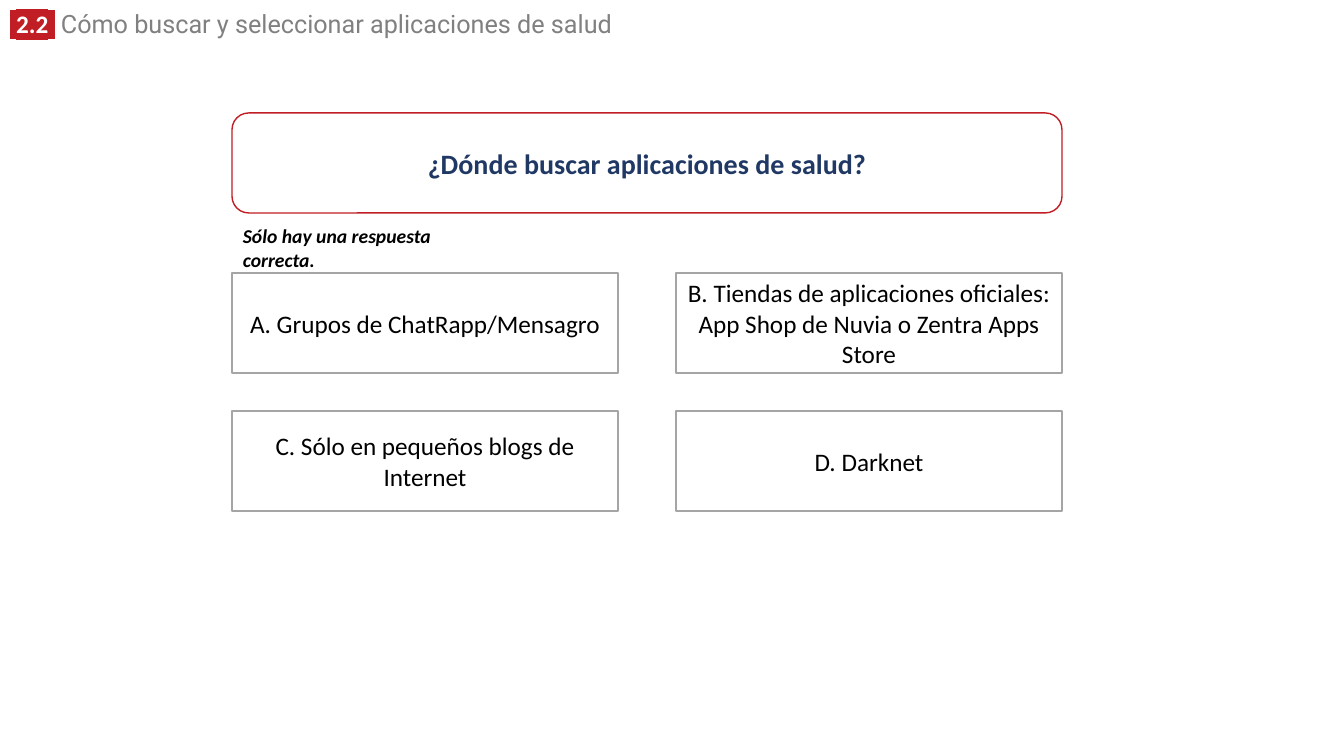
"""Builds a quiz slide on where to look for health apps."""
from dataclasses import dataclass

from lxml import etree
from pptx import Presentation
from pptx.dml.color import RGBColor
from pptx.enum.shapes import MSO_SHAPE
from pptx.enum.text import MSO_ANCHOR, PP_ALIGN
from pptx.oxml.ns import qn
from pptx.util import Emu, Pt

RECTANGLE = MSO_SHAPE.RECTANGLE
ROUNDED = MSO_SHAPE.ROUNDED_RECTANGLE
MIDDLE = MSO_ANCHOR.MIDDLE
CENTER = PP_ALIGN.CENTER
EMU_PER_PX = 914400 / 100.8


@dataclass(frozen=True)
class Theme:
    red: str = "C01E24"
    navy: str = "203864"
    grey: str = "808080"
    border: str = "A5A5A5"
    white: str = "FFFFFF"
    black: str = "000000"
    body_font: str = "Calibri"
    heading_font: str = "Roboto"
    question_size: int = 20
    text_size: int = 18
    hint_size: int = 14


THEME = Theme()


def px(*lengths):
    return [Emu(round(length * EMU_PER_PX)) for length in lengths]


def write(paragraph, text, size=THEME.text_size, color=THEME.black,
          font=THEME.body_font, bold=False, italic=False, highlight=None):
    run = paragraph.add_run()
    run.text = text
    run.font.size = Pt(size)
    run.font.bold = bold
    run.font.italic = italic
    run.font.color.rgb = RGBColor.from_string(color)
    if highlight:
        marker = etree.Element(qn("a:highlight"))
        etree.SubElement(marker, qn("a:srgbClr")).set("val", highlight)
        run.font._element.find(qn("a:solidFill")).addnext(marker)
    run.font.name = font


deck = Presentation()
deck.slide_width, deck.slide_height = px(1344, 756)
slide = deck.slides.add_slide(deck.slide_layouts[6])

heading = slide.shapes.add_textbox(*px(0, 9, 960, 35)).text_frame
heading.word_wrap = True
heading_line = heading.paragraphs[0]
heading_line.line_spacing = 0.8
for part, font in [(" ", THEME.heading_font), ("2.2", THEME.body_font),
                   (" ", THEME.heading_font)]:
    write(heading_line, part, color=THEME.white, font=font, bold=True,
          highlight=THEME.red)
write(heading_line, " Cómo buscar y seleccionar aplicaciones de salud",
      color=THEME.grey, font=THEME.heading_font)

LEFT, CARD_HEIGHT = 232, 100
ANSWER_WIDTH, COLUMN_STEP = 386, 444
ANSWER_TOP, ROW_STEP = 273, 138

answers = [
    "A. Grupos de ChatRapp/Mensagro",
    "B. Tiendas de aplicaciones oficiales: App Shop de Nuvia o Zentra Apps Store",
    "C. Sólo en pequeños blogs de Internet",
    "D. Darknet",
]
cards = [(ROUNDED, LEFT, 113, COLUMN_STEP + ANSWER_WIDTH, THEME.red,
          "¿Dónde buscar aplicaciones de salud?",
          dict(size=THEME.question_size, color=THEME.navy, bold=True))]
for index, answer in enumerate(answers):
    row, column = divmod(index, 2)
    cards.append((RECTANGLE, LEFT + column * COLUMN_STEP,
                  ANSWER_TOP + row * ROW_STEP, ANSWER_WIDTH, THEME.border,
                  answer, {}))

for outline, left, top, width, border, text, text_format in cards:
    card = slide.shapes.add_shape(outline, *px(left, top, width, CARD_HEIGHT))
    card.shadow.inherit = False
    card.fill.solid()
    card.fill.fore_color.rgb = RGBColor.from_string(THEME.white)
    card.line.color.rgb = RGBColor.from_string(border)
    card.line.width = Pt(1)
    card.text_frame.word_wrap = True
    card.text_frame.vertical_anchor = MIDDLE
    card_line = card.text_frame.paragraphs[0]
    card_line.alignment = CENTER
    write(card_line, text, **text_format)

hint = slide.shapes.add_textbox(*px(233, 219, 242, 34)).text_frame
hint.word_wrap = True
write(hint.paragraphs[0], "Sólo hay una respuesta correcta.",
      size=THEME.hint_size, bold=True, italic=True)

deck.save("out.pptx")
